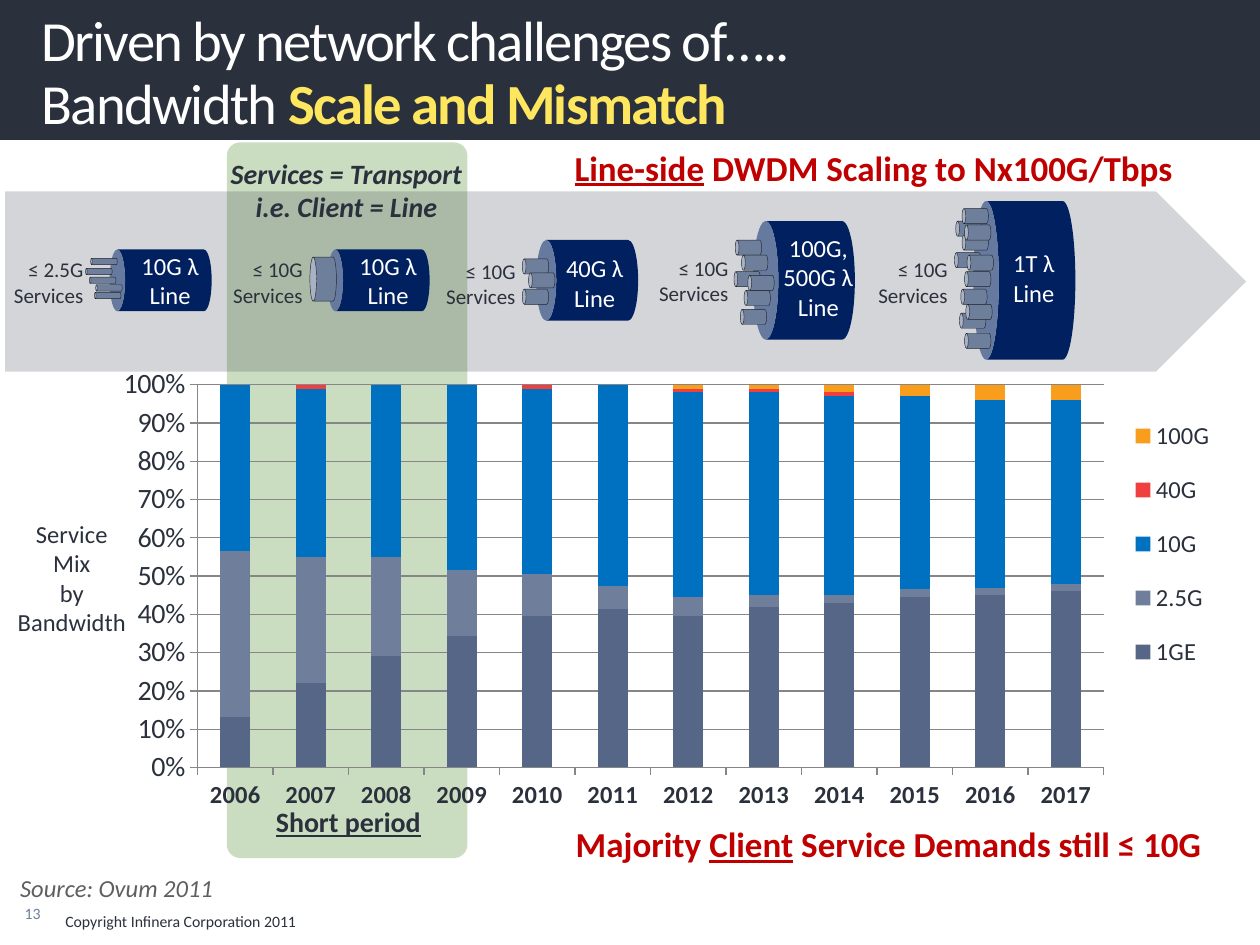
from dataclasses import dataclass

from lxml.etree import SubElement
from pptx import Presentation
from pptx.chart.data import CategoryChartData
from pptx.dml.color import RGBColor
from pptx.enum.chart import XL_CHART_TYPE, XL_LEGEND_POSITION, XL_TICK_MARK
from pptx.enum.shapes import MSO_SHAPE
from pptx.enum.text import MSO_ANCHOR, MSO_AUTO_SIZE, PP_ALIGN
from pptx.oxml import parse_xml
from pptx.oxml.ns import nsdecls, qn
from pptx.util import Inches, Pt

FONT = "Calibri"
WHITE = RGBColor(0xFF, 0xFF, 0xFF)
INK = RGBColor(0x2A, 0x31, 0x3D)
SLATE = RGBColor(0x6E, 0x7F, 0x9B)
OUTLINE = RGBColor(0x20, 0x25, 0x2E)
NAVY = RGBColor(0x00, 0x20, 0x60)
GREEN = RGBColor(0x55, 0x91, 0x32)
RED = RGBColor(0xC0, 0x00, 0x00)
YELLOW = RGBColor(0xFE, 0xE6, 0x5E)
GRAY = RGBColor(0x5F, 0x5F, 0x5F)
GRID = RGBColor(0x86, 0x86, 0x86)

LINE_TOP, LINE_LENGTH, PIPE_LENGTH = 1.82, 0.81, 0.21


@dataclass
class Stage:
    """One step of line scaling; frames are given before the quarter turn."""
    line_left: float
    line_diameter: float
    line_text: str
    line_box: tuple[float, float, float, float]
    service: str
    service_at: tuple[float, float]
    pipe_diameter: float
    pipes: list[tuple[float, float]]
    wrap: bool = False


@dataclass
class Series:
    name: str
    color: RGBColor
    values: tuple[int, ...]


STAGES = [
    Stage(1.03, 0.49, "10G λ\nLine", (1.01, 1.94, 0.68, 0.57), "≤ 2.5G Services", (-0.09, 1.99), 0.05,
          [(0.8, 1.97), (0.76, 2.05), (0.79, 2.12), (0.83, 2.24), (0.84, 2.18)]),
    Stage(2.76, 0.49, "10G λ\nLine", (2.74, 1.94, 0.68, 0.57), "≤ 10G Services", (1.65, 1.99), 0.35,
          [(2.39, 2.11)]),
    Stage(4.34, 0.64, "40G λ\nLine", (4.38, 1.96, 0.68, 0.57), "≤ 10G Services", (3.34, 2), 0.12,
          [(4.19, 2.01), (4.24, 2.12), (4.19, 2.25)]),
    Stage(5.91, 0.94, "100G, 500G λ\nLine", (6.03, 1.8, 0.93, 0.81), "≤ 10G Services", (5.03, 1.98), 0.12,
          [(5.88, 1.86), (5.93, 1.98), (5.87, 2.11), (5.95, 2.26), (5.92, 2.41), (5.98, 2.14)], True),
    Stage(7.5, 1.26, "1T λ\nLine", (7.87, 1.92, 0.67, 0.57), "≤ 10G Services", (6.77, 1.99), 0.12,
          [(7.63, 1.71), (7.68, 1.82), (7.62, 1.96), (7.7, 2.11), (7.67, 2.25), (7.72, 1.98),
           (7.68, 1.61), (7.7, 1.74), (7.66, 2.44), (7.7, 2.6), (7.71, 2.37)], True),
]

SERIES = [
    Series("1GE", RGBColor(0x55, 0x66, 0x86), (13, 22, 29, 34, 40, 41, 40, 42, 43, 45, 45, 46)),
    Series("2.5G", RGBColor(0x6E, 0x7E, 0x9B), (43, 33, 26, 17, 11, 6, 5, 3, 2, 2, 2, 2)),
    Series("10G", RGBColor(0x00, 0x70, 0xC0), (43, 44, 45, 48, 49, 52, 54, 53, 52, 51, 49, 48)),
    Series("40G", RGBColor(0xEF, 0x3F, 0x3F), (0, 1, 0, 0, 1, 0, 1, 1, 1, 0, 0, 0)),
    Series("100G", RGBColor(0xF8, 0x9E, 0x1C), (0, 0, 0, 0, 0, 0, 1, 1, 2, 3, 4, 4)),
]


def add_span(para, text: str, size: float, color=INK, bold=False, italic=False, underline=False):
    span = para.add_run()
    span.text = text
    font = span.font
    font.name, font.size, font.color.rgb = FONT, Pt(size), color
    font.bold, font.italic, font.underline = bold, italic, underline
    return span


def add_text(shapes, at, text: str, size: float, align=PP_ALIGN.LEFT, wrap=True, indent=0.0,
             anchor=MSO_ANCHOR.TOP, underlined="", **style):
    """Add a text box, one paragraph a line; the part named by underlined is underlined."""
    box = shapes.add_textbox(*map(Inches, at))
    frame = box.text_frame
    frame.word_wrap, frame.vertical_anchor = wrap, anchor
    frame.margin_left = Inches(0.1 + indent)
    for number, line in enumerate(text.split("\n")):
        para = frame.add_paragraph() if number else frame.paragraphs[0]
        para.alignment = align
        before, mark, after = line.partition(underlined) if underlined else (line, "", "")
        for part in (before, mark, after):
            if part:
                add_span(para, part, size, underline=part == mark, **style)


def add_solid(shapes, kind, at, fill: RGBColor, opacity=100):
    shape = shapes.add_shape(kind, *map(Inches, at))
    shape.shadow.inherit = False
    shape.line.fill.background()
    shape.fill.solid()
    shape.fill.fore_color.rgb = fill
    if opacity < 100:
        color = shape.fill._xPr.find(f".//{qn('a:srgbClr')}")
        SubElement(color, qn("a:alpha"), val=str(opacity * 1000))
    return shape


def add_can(shapes, left: float, top: float, diameter: float, length: float, fill: RGBColor):
    can = add_solid(shapes, MSO_SHAPE.CAN, (left, top, diameter, length), fill)
    can.rotation = 270
    return can


def add_stage(page, stage: Stage):
    shapes = page.shapes.add_group_shape().shapes
    add_can(shapes, stage.line_left, LINE_TOP, stage.line_diameter, LINE_LENGTH, NAVY)
    add_text(shapes, stage.line_box, stage.line_text, 14, PP_ALIGN.CENTER, stage.wrap, color=WHITE)
    for left, top in stage.pipes:
        pipe = add_can(shapes, left, top, stage.pipe_diameter, PIPE_LENGTH, SLATE)
        pipe.line.color.rgb, pipe.line.width = OUTLINE, Pt(0.25)
    add_text(shapes, (*stage.service_at, 0.85, 0.5), stage.service, 12, PP_ALIGN.RIGHT)


def manual_layout(x: float, y: float, w: float, h: float, inner=False):
    target = '<c:layoutTarget val="inner"/>' if inner else ""
    sizes = "".join(f'<c:{key} val="{value}"/>' for key, value in zip("xywh", (x, y, w, h)))
    return parse_xml(f'<c:layout {nsdecls("c")}><c:manualLayout>{target}<c:xMode val="edge"/>'
                     f'<c:yMode val="edge"/>{sizes}</c:manualLayout></c:layout>')


def add_service_chart(page):
    data = CategoryChartData(number_format="0")
    data.categories = [str(year) for year in range(2006, 2018)]
    for series in SERIES:
        data.add_series(series.name, series.values)
    at = map(Inches, (0.33, 2.84, 9.45, 3.89))
    chart = page.shapes.add_chart(XL_CHART_TYPE.COLUMN_STACKED_100, *at, data).chart
    chart.has_title = False
    chart.font.name, chart.font.size, chart.font.color.rgb = FONT, Pt(10), INK

    plot = chart.plots[0]
    plot.gap_width, plot.overlap, plot.vary_by_categories = 150, 100, False
    for drawn, series in zip(plot.series, SERIES):
        drawn.format.fill.solid()
        drawn.format.fill.fore_color.rgb = series.color

    for axis, size, bold in ((chart.category_axis, 14, True), (chart.value_axis, 16, False)):
        font = axis.tick_labels.font
        font.name, font.size, font.bold, font.color.rgb = FONT, Pt(size), bold, INK
        axis.major_tick_mark = XL_TICK_MARK.OUTSIDE
        axis.format.line.color.rgb = GRID
    values = chart.value_axis
    values.maximum_scale, values.minimum_scale, values.major_unit = 1, 0, 0.1
    values.tick_labels.number_format, values.tick_labels.number_format_is_linked = "0%", False
    values.major_gridlines.format.line.color.rgb = GRID

    chart.has_legend = True
    legend = chart.legend
    legend.position, legend.include_in_layout = XL_LEGEND_POSITION.RIGHT, False
    legend.font.name, legend.font.size, legend.font.color.rgb = FONT, Pt(14), INK
    legend._element.find(qn("c:legendPos")).addnext(manual_layout(0.9, 0.08, 0.1, 0.6))
    area = chart._chartSpace.find(f".//{qn('c:plotArea')}")
    for layout in area.findall(qn("c:layout")):
        area.remove(layout)
    area.insert(0, manual_layout(0.131, 0.055, 0.761, 0.781, inner=True))


def place_title(page):
    title = page.shapes.title
    title.left, title.top, title.width, title.height = map(Inches, (0.33, 0.07, 9.53, 1.02))
    frame = title.text_frame
    frame.auto_size, frame.word_wrap = MSO_AUTO_SIZE.NONE, True
    frame.vertical_anchor, frame.margin_left = MSO_ANCHOR.MIDDLE, 0
    para = frame.paragraphs[0]
    para.alignment, para.line_spacing = PP_ALIGN.LEFT, Pt(36)
    spans = [add_span(para, "Driven by network challenges of…..", 32.4, WHITE)]
    para.add_line_break()
    spans.append(add_span(para, "Bandwidth ", 32.4, WHITE))
    spans.append(add_span(para, "Scale and Mismatch", 32.4, YELLOW, bold=True))
    for span in spans:
        span.font._element.set("spc", "-100")
    title.element.getparent().append(title.element)  # in front of the header band


def main():
    deck = Presentation()
    deck.slide_width, deck.slide_height = Inches(10), Inches(7.5)
    page = deck.slides.add_slide(deck.slide_layouts[5])
    shapes = page.shapes

    add_solid(shapes, MSO_SHAPE.RECTANGLE, (0, 0, 10, 1.11), INK)
    period = add_solid(shapes, MSO_SHAPE.ROUNDED_RECTANGLE, (1.8, 1.13, 1.91, 5.68), GREEN, 30)
    period.adjustments[0] = 0.056
    arrow = add_solid(shapes, MSO_SHAPE.RIGHT_ARROW, (0.04, 1.52, 9.85, 1.43), INK, 20)
    arrow.adjustments[0], arrow.adjustments[1] = 1, 0.5
    add_text(shapes, (0, 7.12, 0.42, 0.25), "13", 9, PP_ALIGN.RIGHT, anchor=MSO_ANCHOR.MIDDLE, color=SLATE)
    add_text(shapes, (0.42, 7.19, 4.57, 0.3), "Copyright Infinera Corporation 2011", 9)
    add_service_chart(page)
    add_text(shapes, (4.4, 1.11, 5.45, 0.67), "Line-side DWDM Scaling to Nx100G/Tbps", 20,
             indent=0.06, underlined="Line-side", color=RED, bold=True)
    add_text(shapes, (4.41, 6.48, 5.23, 0.59), "Majority Client Service Demands still ≤ 10G", 20,
             indent=0.06, underlined="Client", color=RED, bold=True)
    add_text(shapes, (0, 6.88, 2.06, 0.38), "Source: Ovum 2011", 14, indent=0.06, color=GRAY, italic=True)
    for stage in STAGES:
        add_stage(page, stage)
    add_text(shapes, (2.08, 6.34, 1.37, 0.37), "Short period", 16, PP_ALIGN.CENTER, False,
             underlined="Short period", bold=True)
    add_text(shapes, (-0.01, 4.07, 1.16, 1.04), "Service\nMix\nby Bandwidth", 14, PP_ALIGN.CENTER)
    add_text(shapes, (1.72, 1.19, 2.06, 0.64), "Services = Transport\ni.e. Client = Line", 16,
             PP_ALIGN.CENTER, False, bold=True, italic=True)
    place_title(page)
    deck.save("out.pptx")


if __name__ == "__main__":
    main()
